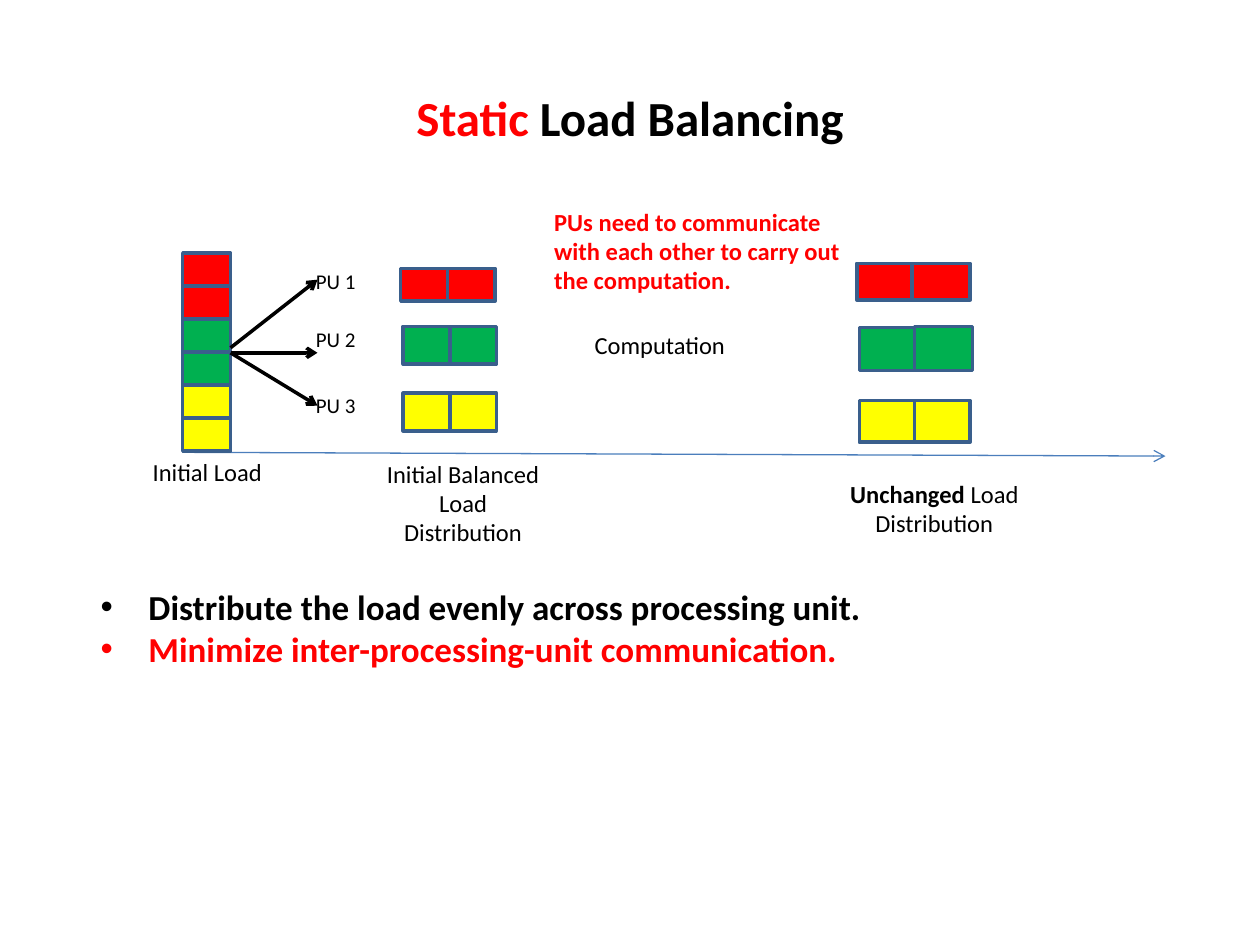
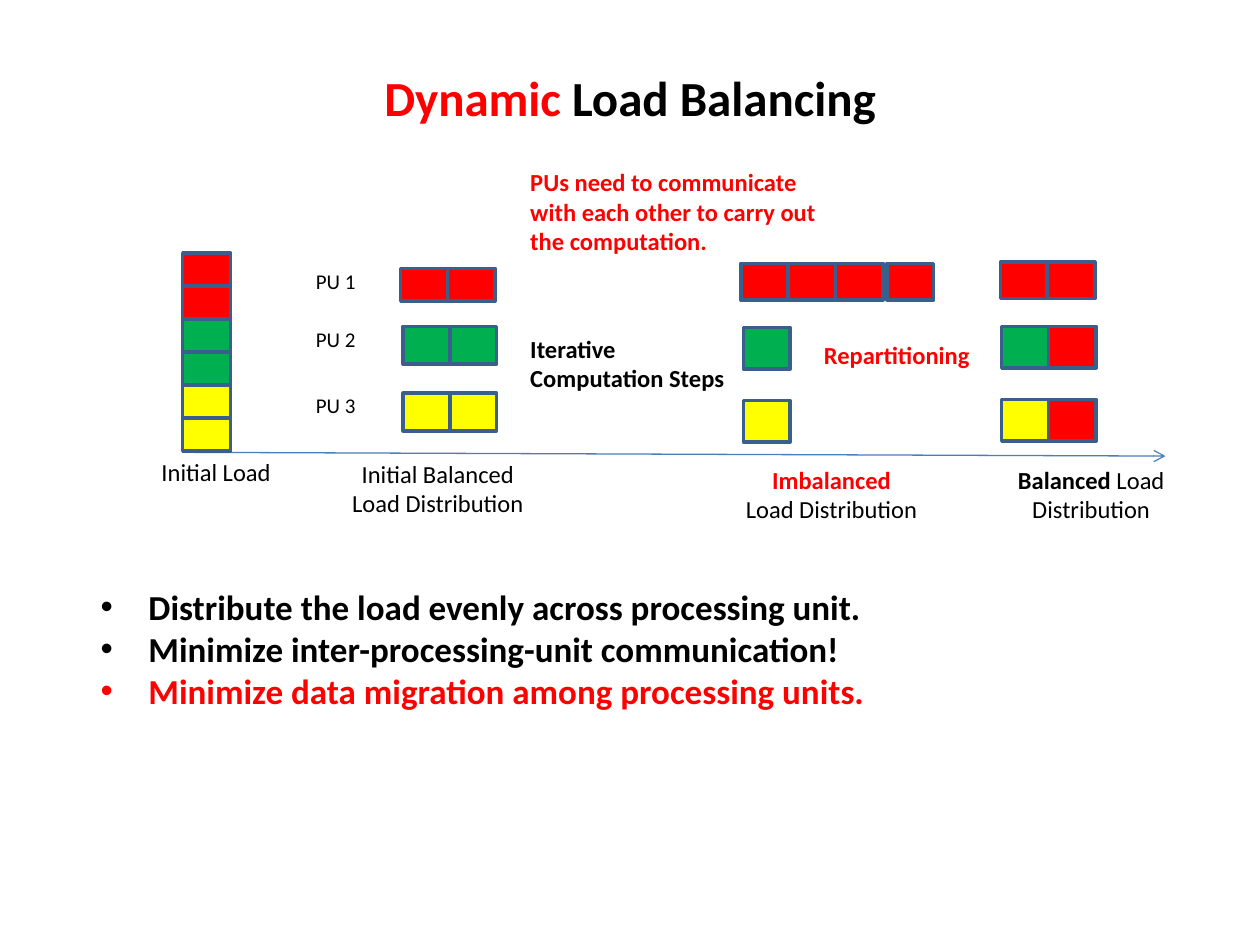
from lxml import etree
from pptx import Presentation
from pptx.dml.color import RGBColor
from pptx.enum.shapes import MSO_CONNECTOR, MSO_SHAPE
from pptx.enum.text import MSO_ANCHOR, MSO_AUTO_SIZE, PP_ALIGN
from pptx.oxml.ns import qn
from pptx.util import Inches, Pt

BLACK = RGBColor(0x00, 0x00, 0x00)
RED = RGBColor(0xFF, 0x00, 0x00)
GREEN = RGBColor(0x00, 0xB0, 0x50)
YELLOW = RGBColor(0xFF, 0xFF, 0x00)
BORDER = RGBColor(0x3A, 0x5F, 0x8C)
AXIS = RGBColor(0x4B, 0x7E, 0xBC)

RECT = MSO_SHAPE.RECTANGLE
STRAIGHT = MSO_CONNECTOR.STRAIGHT
LEFT, CENTER = PP_ALIGN.LEFT, PP_ALIGN.CENTER
TOP, MIDDLE = MSO_ANCHOR.TOP, MSO_ANCHOR.MIDDLE
FIT, NO_FIT = MSO_AUTO_SIZE.SHAPE_TO_FIT_TEXT, MSO_AUTO_SIZE.NONE

FONT = "Calibri"
PLAIN = {"bold": False, "color": BLACK}
BOLD = {"bold": True, "color": BLACK}
ALERT = {"bold": True, "color": RED}


def add_text(slide, box, paragraphs, size=14, align=LEFT, anchor=TOP, fit=FIT):
    """Add a text box whose paragraphs are lists of (text, format) runs."""
    sp = slide.shapes.add_textbox(*map(Inches, box))
    tf = sp.text_frame
    for name, value in {"word_wrap": True, "auto_size": fit,
                        "vertical_anchor": anchor}.items():
        setattr(tf, name, value)
    for i, runs in enumerate(paragraphs):
        p = tf.paragraphs[0] if i == 0 else tf.add_paragraph()
        p.alignment = align
        for text, style in runs:
            r = p.add_run()
            r.text = text
            r.font.color.rgb = style["color"]
            for name, value in {"name": FONT, "size": Pt(size),
                                "bold": style["bold"]}.items():
                setattr(r.font, name, value)
    return tf


def add_arrow(slide, start, end, color, width):
    """Add a straight line with an open arrowhead at its end."""
    cxn = slide.shapes.add_connector(STRAIGHT, *map(Inches, start + end))
    cxn.line.color.rgb = color
    cxn.line.width = Pt(width)
    etree.SubElement(cxn.line._get_or_add_ln(), qn("a:tailEnd"), type="arrow")
    etree.SubElement(cxn._element.spPr, qn("a:effectLst"))


def add_cell(slide, box, color):
    """Add one coloured unit of load."""
    sp = slide.shapes.add_shape(RECT, *map(Inches, box))
    sp.shadow.inherit = False
    sp.fill.solid()
    sp.fill.fore_color.rgb = color
    sp.line.color.rgb = BORDER
    sp.line.width = Pt(2)


def add_title(slide, box, kind):
    """Add the centred title with its first word in red."""
    add_text(slide, box, [[(kind, ALERT), (" Load Balancing", BOLD)]],
             28, CENTER, MIDDLE, NO_FIT)


def add_bullets(slide, box, items):
    """Add the bulleted goals, the last one in red."""
    styles = [BOLD] * (len(items) - 1) + [ALERT]
    tf = add_text(slide, box, [[run] for run in zip(items, styles)], 20)
    for p in tf.paragraphs:
        pPr = p._p.get_or_add_pPr()
        pPr.set("marL", str(Inches(0.38)))
        pPr.set("indent", str(Inches(-0.38)))
        etree.SubElement(pPr, qn("a:buFont"), typeface="Arial")
        etree.SubElement(pPr, qn("a:buChar"), char="•")


def add_initial_load(slide, box, caption_dx):
    """Add the time axis, the stack of load cells and its caption."""
    x, y, w, h = box
    bottom = y + h + 0.01
    add_arrow(slide, (x, bottom), (x + 7.8, bottom + 0.03), AXIS, 0.75)
    colors = [c for c in (RED, GREEN, YELLOW) for _ in range(2)]
    step = h / len(colors)
    for i, color in enumerate(colors):
        add_cell(slide, (x, y + i * step, w, step), color)
    add_text(slide, (x + caption_dx, y + h, 1.75, 0.34),
             [[("Initial Load", PLAIN)]], align=CENTER)


def add_distribution(slide, origin, rows):
    """Add rows of cells, each given as dx, dy, cell width, height, pitch, colours."""
    x, y = origin
    for dx, dy, w, h, pitch, colors in rows:
        for i, color in enumerate(colors):
            add_cell(slide, (x + dx + i * pitch, y + dy, w, h), color)


def add_balanced_units(slide, origin):
    """Add the PU labels and the evenly shared load beside them."""
    x, y = origin
    for i, dy in enumerate((0, 0.46, 0.99), 1):
        add_text(slide, (x, y + dy, 1.17, 0.3), [[(f"PU {i}", PLAIN)]], 12, CENTER)
    add_distribution(slide, (x + 1.1, y + 0.05), [
        (0, 0, 0.38, 0.26, 0.37, [RED] * 2),
        (0.02, 0.46, 0.37, 0.3, 0.37, [GREEN] * 2),
        (0.02, 0.99, 0.37, 0.3, 0.37, [YELLOW] * 2)])


def add_caption(slide, box, *runs):
    """Add a centred caption below the time axis."""
    add_text(slide, box, [runs], align=CENTER)


def add_note(slide, origin):
    """Add the red remark on communication."""
    add_text(slide, (*origin, 2.71, 0.81), [[(
        "PUs need to communicate with each other to carry out the computation.",
        ALERT)]])


def add_diagram_start(slide, caption_dx, balanced_box):
    """Add the initial load and its first distribution, shared by both slides."""
    add_initial_load(slide, (1.45, 2.01, 0.38, 1.57), caption_dx)
    add_balanced_units(slide, (2.08, 2.08))
    add_caption(slide, balanced_box, ("Initial Balanced Load Distribution", PLAIN))


def build_static(slide):
    """Build the static load balancing slide."""
    add_title(slide, (0.5, 0.3, 9, 1.25), "Static")
    add_bullets(slide, (0.7, 4.6, 8.92, 0.77), [
        "Distribute the load evenly across processing unit.",
        "Minimize inter-processing-unit communication."])
    add_diagram_start(slide, -0.68, (2.94, 3.59, 1.47, 0.81))
    for start_y, end_y in ((2.76, 2.22), (2.8, 2.8), (2.8, 3.22)):
        add_arrow(slide, (1.83, start_y), (2.52, end_y), BLACK, 2)
    add_distribution(slide, (6.8, 2.09), [
        (0, 0, 0.46, 0.29, 0.44, [RED] * 2),
        (0.02, 0.51, 0.44, 0.34, 0.44, [GREEN]),
        (0.46, 0.5, 0.46, 0.35, 0.46, [GREEN]),
        (0.02, 1.09, 0.44, 0.33, 0.44, [YELLOW] * 2)])
    add_caption(slide, (6.64, 3.75, 1.55, 0.57),
                ("Unchanged ", BOLD), ("Load Distribution", PLAIN))
    add_text(slide, (4.62, 2.57, 1.51, 0.34), [[("Computation", PLAIN)]])
    add_note(slide, (4.3, 1.59))


def build_dynamic(slide):
    """Build the dynamic load balancing slide."""
    add_title(slide, (0.5, 0.28, 9, 0.98), "Dynamic")
    add_diagram_start(slide, -0.61, (2.67, 3.59, 1.61, 0.57))
    add_distribution(slide, (5.88, 2.09), [
        (0, 0, 0.38, 0.29, 0.375, [RED] * 3),
        (1.16, 0, 0.37, 0.29, 0.37, [RED]),
        (0.02, 0.51, 0.37, 0.33, 0.37, [GREEN]),
        (0.02, 1.09, 0.37, 0.33, 0.37, [YELLOW])])
    add_caption(slide, (5.82, 3.64, 1.56, 0.57),
                ("Imbalanced ", ALERT), ("Load Distribution", PLAIN))
    add_text(slide, (4.11, 2.6, 1.79, 0.57), [[("Iterative Computation Steps", BOLD)]])
    add_distribution(slide, (7.94, 2.08), [
        (0, 0, 0.38, 0.29, 0.37, [RED] * 2),
        (0.01, 0.51, 0.38, 0.33, 0.37, [GREEN, RED]),
        (0.01, 1.09, 0.38, 0.33, 0.37, [YELLOW, RED])])
    add_caption(slide, (7.9, 3.64, 1.52, 0.57),
                ("Balanced", BOLD), (" Load Distribution", PLAIN))
    add_text(slide, (6.44, 2.65, 1.4, 0.34), [[("Repartitioning", ALERT)]])
    add_note(slide, (4.11, 1.28))
    add_bullets(slide, (0.7, 4.6, 8.92, 1.11), [
        "Distribute the load evenly across processing unit.",
        "Minimize inter-processing-unit communication!",
        "Minimize data migration among processing units."])


def main():
    """Build both slides and save the presentation."""
    prs = Presentation()
    prs.slide_width, prs.slide_height = Inches(10), Inches(7.5)
    for build in (build_static, build_dynamic):
        build(prs.slides.add_slide(prs.slide_layouts[6]))
    prs.save("out.pptx")


if __name__ == "__main__":
    main()
